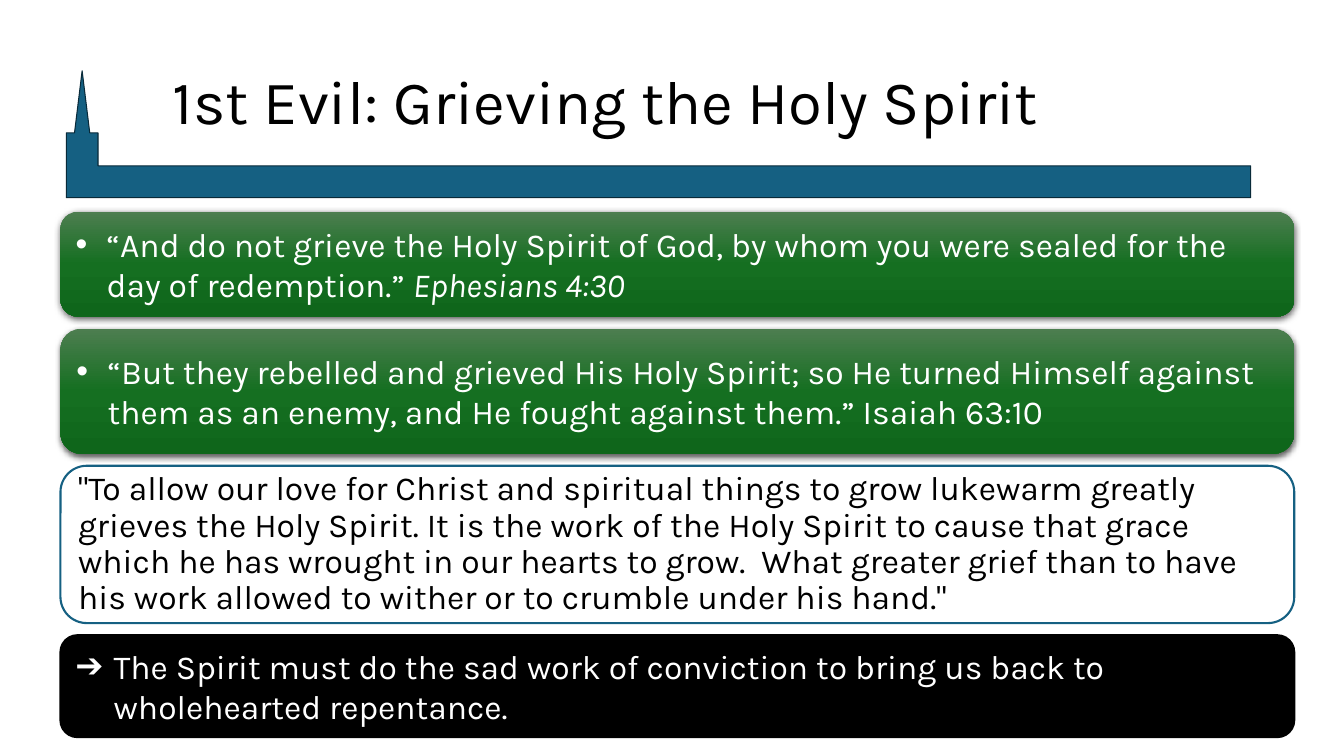
import copy
import dataclasses
import lxml.etree
import pptx
import pptx.dml.color
import pptx.enum.shapes
import pptx.enum.text
import pptx.oxml.ns
import pptx.util


@dataclasses.dataclass(frozen=True)
class Theme:
    font: str = "Karla"
    bullet_font: str = "Arial"
    title_size: int = 44
    body_size: int = 24
    blue: str = "156082"
    navy: str = "092A39"
    black: str = "000000"
    white: str = "FFFFFF"
    greens: tuple = ((0, "4D7E50"), (0.5, "156F21"), (1, "0F661B"))


@dataclasses.dataclass(frozen=True)
class Box:
    left: float
    top: float
    width: float
    height: float

    def percent(self, left, top, width, height):
        return Box(
            self.left + self.width * left / 100,
            self.top + self.height * top / 100,
            self.width * width / 100,
            self.height * height / 100,
        )

    def place(self, shape):
        for name, value in dataclasses.asdict(self).items():
            setattr(shape, name, round(value))


THEME = Theme()
SHAPES = pptx.enum.shapes.MSO_SHAPE
LEFT = pptx.enum.text.PP_ALIGN.LEFT
MIDDLE = pptx.enum.text.MSO_ANCHOR.MIDDLE
HEADING = "1st Evil: Grieving the Holy Spirit"
GREEN = {"gradient": THEME.greens, "ink": THEME.white, "bullet": "•", "indent": 0.31}
PANELS = [
    {**GREEN, "rows": 104, "runs": [
        ("“And do not grieve the Holy Spirit of God, by whom you were sealed "
         "for the day of redemption.” ", False),
        ("Ephesians 4:30", True),
    ]},
    {**GREEN, "rows": 124, "runs": [
        ("“But they rebelled and grieved His Holy Spirit; so He turned Himself "
         "against them as an enemy, and He fought against them.” Isaiah 63:10", False),
    ]},
    {"fill": THEME.white, "line": THEME.blue, "ink": THEME.black, "rows": 156, "spacing": 0.9, "runs": [
        ('"To allow our love for Christ and spiritual things to grow lukewarm '
         "greatly grieves the Holy Spirit. It is the work of the Holy Spirit to "
         "cause that grace which he has wrought in our hearts to grow.  What "
         "greater grief than to have his work allowed to wither or to crumble "
         'under his hand."', False),
    ]},
    {"fill": THEME.black, "line": THEME.black, "ink": THEME.white, "rows": 101,
     "bullet": "➔", "indent": 0.38, "runs": [
        ("The Spirit must do the sad work of conviction to bring us back to "
         "wholehearted repentance.", False),
    ]},
]
GAP_ROWS = 12


def color(value):
    return pptx.dml.color.RGBColor.from_string(value)


def apply(target, values):
    for name, value in values.items():
        setattr(target, name, value)


def add_child(parent, tag, **values):
    child = lxml.etree.SubElement(parent, pptx.oxml.ns.qn(tag))
    for name, value in values.items():
        child.set(name, str(value))
    return child


def format_font(font, size, ink, italic=False):
    apply(font, {"name": THEME.font, "size": pptx.util.Pt(size), "italic": italic})
    font.color.rgb = color(ink)


def add_plain_shape(slide, kind, box, fill, line, line_width):
    shape = slide.shapes.add_shape(kind, 0, 0, 0, 0)
    box.place(shape)
    shape.shadow.inherit = False
    if fill:
        shape.fill.solid()
        shape.fill.fore_color.rgb = color(fill)
    if line:
        shape.line.color.rgb = color(line)
        shape.line.width = pptx.util.Pt(line_width)
    else:
        shape.line.fill.background()
    return shape


def add_gradient(shape, stops):
    shape.fill.gradient()
    shape.fill.gradient_angle = 270
    stop_list = shape._element.spPr.find(".//" + pptx.oxml.ns.qn("a:gsLst"))
    stop_list.append(copy.deepcopy(stop_list[0]))
    for stop, (position, value) in zip(shape.fill.gradient_stops, stops):
        stop.position = position
        stop.color.rgb = color(value)


def add_shadow(shape):
    effects = shape._element.spPr.find(pptx.oxml.ns.qn("a:effectLst"))
    shadow = add_child(
        effects, "a:outerShdw", blurRad=pptx.util.Pt(4.5), dist=pptx.util.Pt(1.5),
        dir=5400000, algn="ctr", rotWithShape=0,
    )
    add_child(add_child(shadow, "a:srgbClr", val=THEME.black), "a:alpha", val=63000)


def add_bullet(paragraph, character, indent):
    properties = paragraph._p.get_or_add_pPr()
    properties.set("marL", str(pptx.util.Inches(indent)))
    properties.set("indent", str(-pptx.util.Inches(indent)))
    add_child(properties, "a:buFont", typeface=THEME.bullet_font)
    add_child(properties, "a:buChar", char=character)


def draw_header(slide, box):
    steeple = add_plain_shape(
        slide, SHAPES.BENT_UP_ARROW, box.percent(0, 18.8, 99.9, 81.2), THEME.blue, THEME.navy, 0.75
    )
    for index, value in enumerate((0.25, 0.06, 0.49)):
        steeple.adjustments[index] = value
    steeple._element.spPr.find(pptx.oxml.ns.qn("a:xfrm")).set("flipH", "1")
    title = slide.shapes.title
    title._element.addprevious(steeple._element)
    box.percent(7.5, 0, 92.5, 81.2).place(title)
    title.text_frame.text = HEADING
    apply(title.text_frame, {"word_wrap": True, "vertical_anchor": MIDDLE})
    paragraph = title.text_frame.paragraphs[0]
    apply(paragraph, {"alignment": LEFT, "line_spacing": 0.9})
    format_font(paragraph.runs[0].font, THEME.title_size, THEME.black)


def draw_panel(slide, box, panel):
    shape = add_plain_shape(
        slide, SHAPES.ROUNDED_RECTANGLE, box, panel.get("fill"), panel.get("line"), 1.5
    )
    if "gradient" in panel:
        add_gradient(shape, panel["gradient"])
        add_shadow(shape)
    apply(shape.text_frame, {"word_wrap": True, "vertical_anchor": MIDDLE})
    paragraph = shape.text_frame.paragraphs[0]
    apply(paragraph, {"alignment": LEFT, "line_spacing": panel.get("spacing", 1.0)})
    if "bullet" in panel:
        add_bullet(paragraph, panel["bullet"], panel["indent"])
    for text, italic in panel["runs"]:
        run = paragraph.add_run()
        run.text = text
        format_font(run.font, THEME.body_size, panel["ink"], italic)


def draw_panels(slide, box):
    total = sum(panel["rows"] for panel in PANELS) + GAP_ROWS * (len(PANELS) - 1)
    row = 0
    for panel in PANELS:
        place = box.percent(0, 100 * row / total, 100, 100 * panel["rows"] / total)
        draw_panel(slide, place, panel)
        row += panel["rows"] + GAP_ROWS


def main():
    presentation = pptx.Presentation()
    apply(presentation, {
        "slide_width": pptx.util.Inches(13.33),
        "slide_height": pptx.util.Inches(7.5),
    })
    page = Box(0, 0, presentation.slide_width, presentation.slide_height)
    slide = presentation.slides.add_slide(presentation.slide_layouts.get_by_name("Title Only"))
    draw_header(slide, page.percent(5.55, 5.47, 87.6, 20.67))
    draw_panels(slide, page.percent(4.5, 28, 91.8, 69.5))
    presentation.save("out.pptx")


if __name__ == "__main__":
    main()
